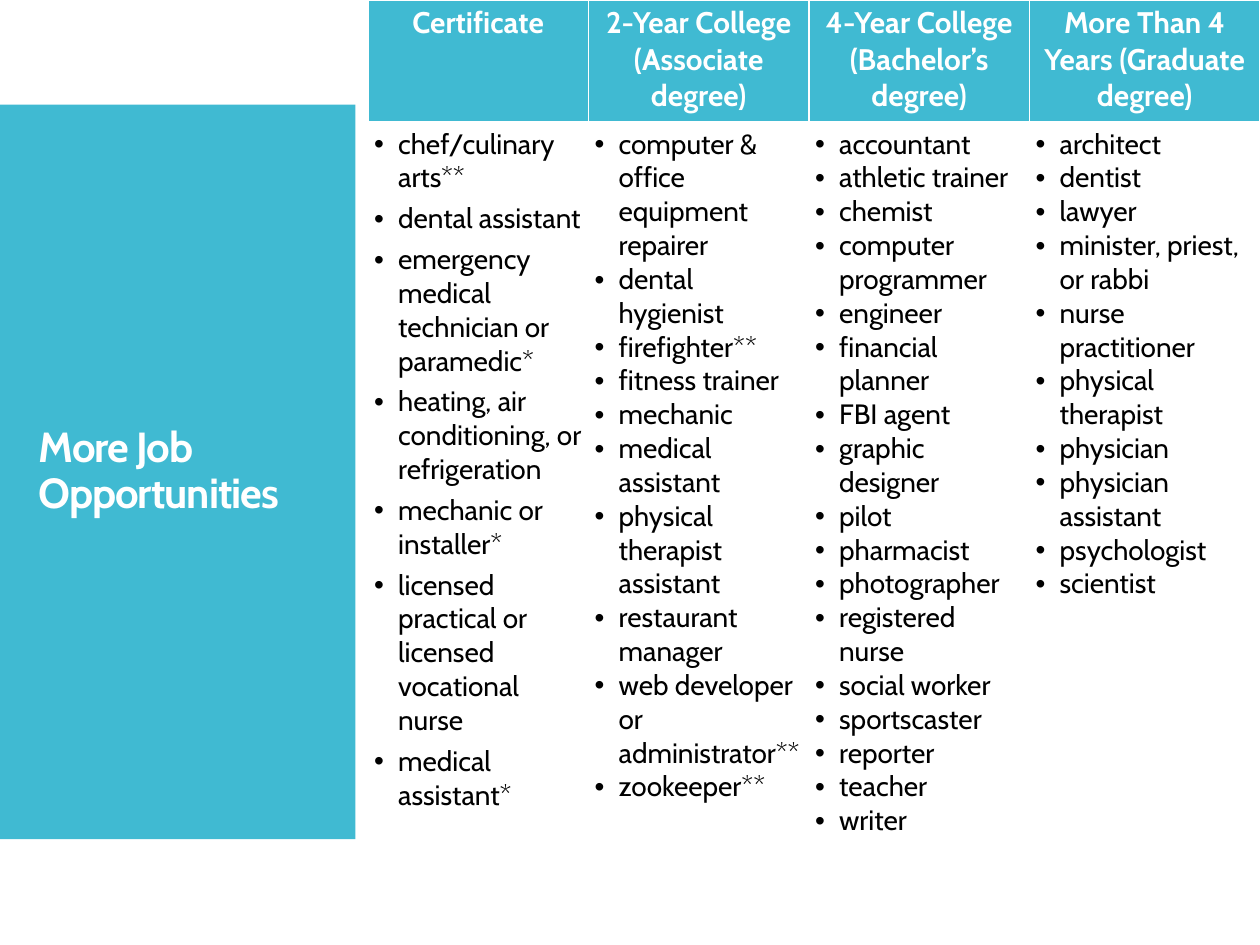
import pptx
import pptx.dml.color
import pptx.enum.text
import pptx.oxml
import pptx.oxml.ns
import pptx.util
from pptx.enum.shapes import MSO_SHAPE
from pptx.util import Inches

HEADERS = [
    "Certificate",
    "2-Year College (Associate degree)",
    "4-Year College (Bachelor’s degree)",
    "More Than 4 Years (Graduate degree)",
]
JOBS = [
    ["chef/culinary arts**", "dental assistant",
     "emergency medical technician or paramedic*",
     "heating, air conditioning, or refrigeration",
     "mechanic or installer*",
     "licensed practical or licensed vocational nurse",
     "medical assistant*"],
    ["computer & office equipment repairer", "dental hygienist",
     "firefighter**", "fitness trainer", "mechanic", "medical assistant",
     "physical therapist assistant", "restaurant manager",
     "web developer or administrator**", "zookeeper**"],
    ["accountant", "athletic trainer", "chemist", "computer programmer",
     "engineer", "financial planner", "FBI agent", "graphic designer",
     "pilot", "pharmacist", "photographer", "registered nurse",
     "social worker", "sportscaster", "reporter", "teacher", "writer"],
    ["architect", "dentist", "lawyer", "minister, priest, or rabbi",
     "nurse practitioner", "physical therapist", "physician",
     "physician assistant", "psychologist", "scientist"],
]
COLUMN_WIDTHS = [1.75, 1.75, 1.75, 1.83]
ROW_HEIGHTS = [0.97, 6.17, 0.36]


def color(value):
    return pptx.dml.color.RGBColor.from_string(value)


def xml(tag, content="", **attributes):
    listed = " ".join(f'{name}="{value}"' for name, value in attributes.items())
    return pptx.oxml.parse_xml(
        f'<a:{tag} {pptx.oxml.ns.nsdecls("a")} {listed}>{content}</a:{tag}>')


def write(paragraph, text, font="Cabin", size=16, ink="000000", bold=False,
          align="LEFT", after=0, line=None, tracking=None, bullet=False):
    paragraph.alignment = getattr(pptx.enum.text.PP_ALIGN, align)
    paragraph.space_after = pptx.util.Pt(after)
    if line:
        paragraph.line_spacing = line
    run = paragraph.add_run()
    run.text = text
    run.font.name = font
    run.font.size = pptx.util.Pt(size)
    run.font.bold = bold
    run.font.color.rgb = color(ink)
    if tracking:
        run.font._element.set("spc", str(round(tracking * 100)))
    if bullet:
        properties = paragraph._p.get_or_add_pPr()
        properties.set("marL", str(Inches(0.19)))
        properties.set("indent", str(-Inches(0.19)))
        properties.append(xml("buFont", typeface="Arial"))
        properties.append(xml("buChar", char="•"))


class SlideBuilder:
    accent = "40BAD2"
    white = "FFFFFF"

    def __init__(self, slide):
        self.slide = slide

    def panel(self, left, top, width, height):
        shape = self.slide.shapes.add_shape(
            MSO_SHAPE.RECTANGLE,
            Inches(left), Inches(top), Inches(width), Inches(height))
        shape.shadow.inherit = False
        shape.fill.solid()
        shape.fill.fore_color.rgb = color(self.accent)
        shape.line.fill.background()

    def title(self, text, left, top, width, height):
        box = self.slide.shapes.add_textbox(
            Inches(left), Inches(top), Inches(width), Inches(height))
        frame = box.text_frame
        frame.word_wrap = True
        frame.vertical_anchor = pptx.enum.text.MSO_ANCHOR.MIDDLE
        write(frame.paragraphs[0], text, size=24, ink=self.white, bold=True,
              line=0.9, tracking=-0.6)

    def table(self, left, top, column_widths, row_heights):
        table = self.slide.shapes.add_table(
            len(row_heights), len(column_widths), Inches(left), Inches(top),
            Inches(sum(column_widths)), Inches(sum(row_heights))).table
        table.first_row = table.horz_banding = False
        for column, width in zip(table.columns, column_widths):
            column.width = Inches(width)
        for row, height in zip(table.rows, row_heights):
            row.height = Inches(height)
        return table

    def cell(self, cell, texts, fill, borders=(), **text_format):
        cell.margin_left = cell.margin_right = Inches(0.05)
        cell.margin_top = cell.margin_bottom = Inches(0.04)
        cell.fill.solid()
        cell.fill.fore_color.rgb = color(fill)
        line_fill = f'<a:solidFill><a:srgbClr val="{self.white}"/></a:solidFill>'
        for index, side in enumerate(borders):
            cell._tc.get_or_add_tcPr().insert(
                index, xml(f"ln{side}", line_fill, w=pptx.util.Pt(1)))
        frame = cell.text_frame
        for index, text in enumerate(texts):
            paragraph = frame.add_paragraph() if index else frame.paragraphs[0]
            write(paragraph, text, **text_format)


def main():
    presentation = pptx.Presentation()
    presentation.slide_width = Inches(10)
    presentation.slide_height = Inches(7.5)
    builder = SlideBuilder(
        presentation.slides.add_slide(presentation.slide_layouts[6]))

    # Title panel
    builder.panel(0, 0.83, 2.82, 5.83)
    builder.title("More Job Opportunities", 0.21, 1.23, 2.42, 5.03)

    # Jobs by length of education
    table = builder.table(2.92, 0, COLUMN_WIDTHS, ROW_HEIGHTS)
    for column, (header, jobs) in enumerate(zip(HEADERS, JOBS)):
        builder.cell(table.cell(0, column), [header], builder.accent,
                     borders="LRT", size=17, ink=builder.white, bold=True,
                     align="CENTER", after=4)
        builder.cell(table.cell(1, column), jobs, builder.white,
                     bullet=True, after=0 if column else 4)
        if column:
            table.cell(1, column).merge(table.cell(2, column))

    # Empty cell below the certificate jobs
    builder.cell(table.cell(2, 0), [""], builder.white, borders="LB")

    presentation.save("out.pptx")


if __name__ == "__main__":
    main()
